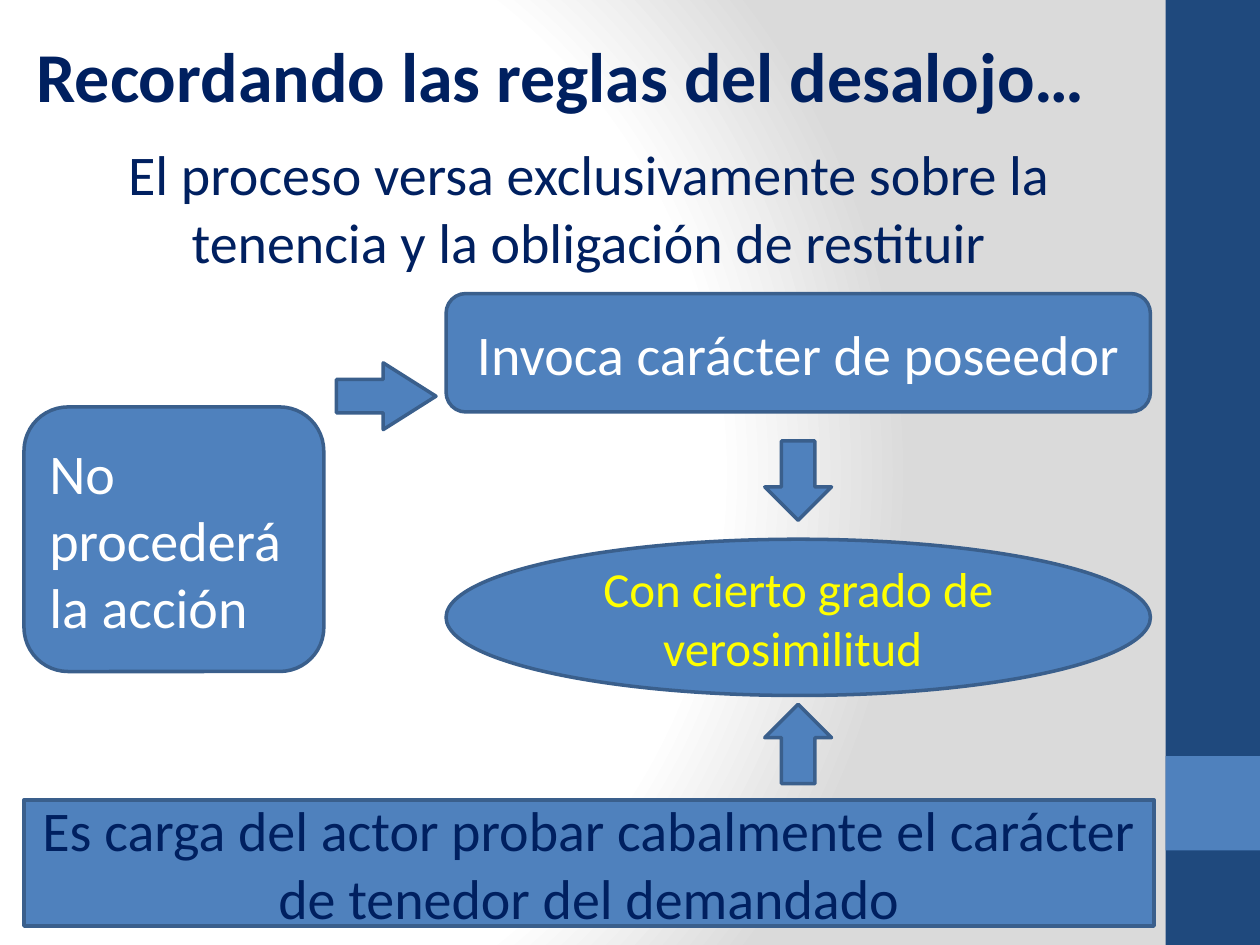
from lxml import etree
from pptx import Presentation
from pptx.dml.color import RGBColor
from pptx.enum.shapes import MSO_SHAPE
from pptx.enum.text import MSO_ANCHOR, MSO_AUTO_SIZE, PP_ALIGN
from pptx.oxml import parse_xml
from pptx.oxml.ns import nsdecls, qn
from pptx.util import Inches, Pt

NAVY = RGBColor(0x00, 0x20, 0x60)
BAND = RGBColor(0x1F, 0x49, 0x7D)
BLUE = RGBColor(0x4F, 0x81, 0xBD)
OUTLINE = RGBColor(0x3A, 0x5F, 0x8C)
WHITE = RGBColor(0xFF, 0xFF, 0xFF)
YELLOW = RGBColor(0xFF, 0xFF, 0x00)
FONT = "Calibri"

BACKDROP = f"""<a:gradFill {nsdecls('a')} rotWithShape="1"><a:gsLst>
<a:gs pos="0"><a:srgbClr val="FFFFFF"/></a:gs>
<a:gs pos="75000"><a:srgbClr val="FFFFFF"/></a:gs>
<a:gs pos="100000"><a:srgbClr val="DADADA"/></a:gs></a:gsLst>
<a:path path="circle"><a:fillToRect l="20000" t="50000" r="100000" b="50000"/></a:path>
</a:gradFill>"""


def write(shape, text, size, color, align=PP_ALIGN.CENTER, bold=False, anchor=MSO_ANCHOR.MIDDLE):
    frame = shape.text_frame
    frame.word_wrap = True
    frame.auto_size = MSO_AUTO_SIZE.NONE
    frame.vertical_anchor = anchor
    paragraph = frame.paragraphs[0]
    paragraph.alignment = align
    paragraph.space_before = Pt(0)
    run = paragraph.add_run()
    run.text = text
    run.font.name = FONT
    run.font.size = Pt(size)
    run.font.bold = bold
    run.font.color.rgb = color
    return paragraph


def add_block(slide, kind, left, top, width, height, fill=BLUE, outlined=True):
    block = slide.shapes.add_shape(kind, left, top, width, height)
    block.shadow.inherit = False
    block.fill.solid()
    block.fill.fore_color.rgb = fill
    if outlined:
        block.line.color.rgb = OUTLINE
        block.line.width = Pt(2)
    else:
        block.line.fill.background()
    return block


def place(placeholder, left, top, width, height):
    placeholder.left, placeholder.top = left, top
    placeholder.width, placeholder.height = width, height


def add_backdrop(slide):
    slide.background.fill.gradient()
    gradient = slide.element.find(".//" + qn("a:gradFill"))
    gradient.getparent().replace(gradient, parse_xml(BACKDROP))


def add_side_band(slide, left, top, width, height):
    add_block(slide, MSO_SHAPE.RECTANGLE, left, top, width, height, BAND, False)
    # Square accent, one side above the bottom edge
    add_block(slide, MSO_SHAPE.RECTANGLE, left, top + height - 2 * width, width, width, BLUE, False)


def fill_heading(slide, left, top, width, height):
    title, rule = slide.shapes.title, slide.placeholders[1]
    place(title, left + Inches(0.08), top, width - Inches(0.23), Inches(0.77))
    write(title, "Recordando las reglas del desalojo…", 40, NAVY, PP_ALIGN.JUSTIFY, True)
    place(rule, left, top + Inches(0.85), width, height - Inches(0.85))
    paragraph = write(rule, "El proceso versa exclusivamente sobre la tenencia y la obligación de restituir",
                      32, NAVY, anchor=MSO_ANCHOR.TOP)
    # Plain paragraph: no bullet, no hanging indent
    properties = paragraph._p.get_or_add_pPr()
    properties.set("marL", "0")
    properties.set("indent", "0")
    etree.SubElement(properties, qn("a:buNone"))


def add_argument(slide, left, top, width, height):
    # Outcome on the left
    outcome = add_block(slide, MSO_SHAPE.ROUNDED_RECTANGLE, left, top + Inches(0.9),
                        Inches(2.38), Inches(2.1))
    write(outcome, "No procederá la acción", 32, WHITE, PP_ALIGN.JUSTIFY)

    # Defence and its threshold, in one column
    column_left, column_width = left + Inches(3.35), Inches(5.59)
    defence = add_block(slide, MSO_SHAPE.ROUNDED_RECTANGLE, column_left, top, column_width, Inches(0.94))
    write(defence, "Invoca carácter de poseedor", 32, WHITE)
    threshold = add_block(slide, MSO_SHAPE.OVAL, column_left, top + Inches(1.95), column_width, Inches(1.24))
    write(threshold, "Con cierto grado de verosimilitud ", 28, YELLOW)

    # Burden of proof along the bottom
    burden = add_block(slide, MSO_SHAPE.RECTANGLE, left, top + height - Inches(1), width, Inches(1))
    write(burden, "Es carga del actor probar cabalmente el carácter de tenedor del demandado", 32, NAVY)

    # Arrows: to the defence, then down and up to the threshold
    to_defence = add_block(slide, MSO_SHAPE.RIGHT_ARROW, left + Inches(2.48), top + Inches(0.55),
                           Inches(0.79), Inches(0.53))
    to_defence.adjustments[1] = 0.79
    arrow_width = Inches(0.53)
    arrow_left = column_left + (column_width - arrow_width) // 2
    for kind, offset in ((MSO_SHAPE.DOWN_ARROW, 1.17), (MSO_SHAPE.UP_ARROW, 3.26)):
        add_block(slide, kind, arrow_left, top + Inches(offset), arrow_width, Inches(0.63))


def main():
    deck = Presentation()
    deck.slide_width, deck.slide_height = Inches(10), Inches(7.5)
    slide = deck.slides.add_slide(deck.slide_layouts[1])
    add_backdrop(slide)
    add_side_band(slide, Inches(9.25), Inches(0), Inches(0.75), Inches(7.5))
    fill_heading(slide, Inches(0.11), Inches(0.21), Inches(9.13), Inches(2.03))
    add_argument(slide, Inches(0.19), Inches(2.33), Inches(8.97), Inches(5.02))
    deck.save("out.pptx")


if __name__ == "__main__":
    main()
